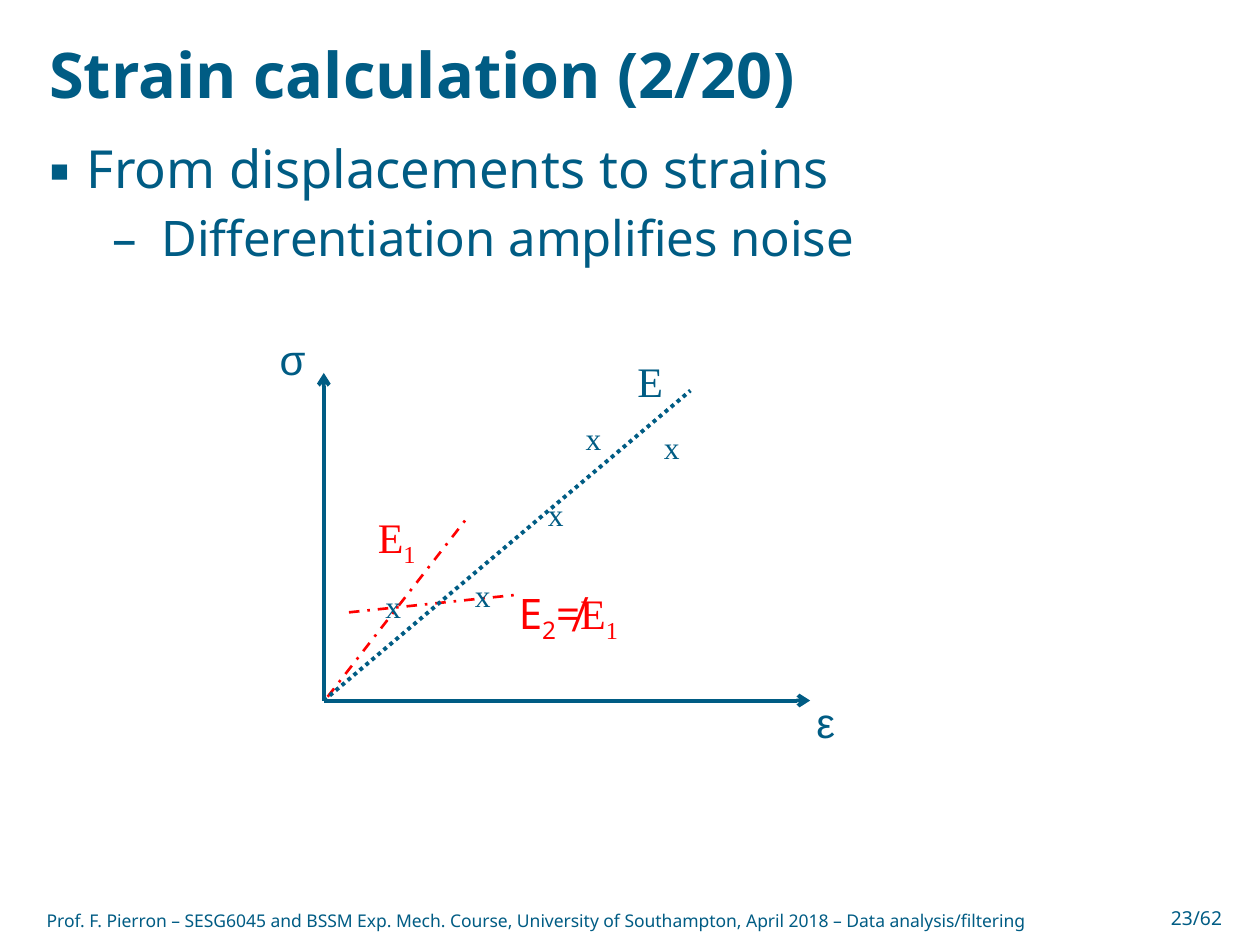
from lxml import etree
from pptx import Presentation
from pptx import util as u
from pptx.dml.color import RGBColor
from pptx.enum import dml, shapes, text
from pptx.oxml import ns

COLORS = {"blue": "005C84", "red": "FF0000"}
SANS, SERIF, GREEK = "Noto Sans", "Times New Roman", "Arial"


def add_run(paragraph, wording, size, font, color="blue", bold=False, subscript=False):
    run = paragraph.add_run()
    run.text = wording
    run.font.size = u.Pt(size)
    run.font.name = font
    run.font.bold = bold
    run.font.color.rgb = RGBColor.from_string(COLORS[color])
    if subscript:
        run._r.get_or_add_rPr().set("baseline", "-25000")


def place(shape, left, top, width, height, anchor):
    shape.left, shape.top = u.Inches(left), u.Inches(top)
    shape.width, shape.height = u.Inches(width), u.Inches(height)
    frame = shape.text_frame
    frame.margin_left = frame.margin_right = frame.margin_top = frame.margin_bottom = 0
    frame.word_wrap = True
    frame.auto_size = text.MSO_AUTO_SIZE.NONE
    frame.vertical_anchor = anchor
    return frame


presentation = Presentation()
presentation.slide_width = u.Inches(10)
presentation.slide_height = u.Inches(7.5)
slide = presentation.slides.add_slide(presentation.slide_layouts[1])
bottom, top_anchor = text.MSO_ANCHOR.BOTTOM, text.MSO_ANCHOR.TOP

title = place(slide.shapes.title, 0.39, 0, 9.3, 0.88, bottom).paragraphs[0]
title.alignment = text.PP_ALIGN.LEFT
add_run(title, "Strain calculation (2/20)", 36, SANS, bold=True)

body = place(slide.placeholders[1], 0.39, 1.08, 9.31, 5.99, top_anchor)
bullets = [
    ("From displacements to strains", 30, "▪", 0.3, 0.3, 0, 1),
    ("Differentiation amplifies noise", 28, "–", 0.89, 0.39, 8.4, 0.9),
]
for level, (wording, size, mark, margin, hanging, before, spacing) in enumerate(bullets):
    paragraph = body.add_paragraph() if level else body.paragraphs[0]
    paragraph.level = level
    properties = paragraph._p.get_or_add_pPr()
    properties.set("marL", str(u.Inches(margin)))
    properties.set("indent", str(-u.Inches(hanging)))
    bullet_color = etree.SubElement(properties, ns.qn("a:buClr"))
    etree.SubElement(bullet_color, ns.qn("a:srgbClr")).set("val", COLORS["blue"])
    etree.SubElement(properties, ns.qn("a:buFont")).set("typeface", SANS)
    etree.SubElement(properties, ns.qn("a:buChar")).set("char", mark)
    paragraph.space_before = u.Pt(before)
    paragraph.line_spacing = spacing
    add_run(paragraph, wording, size, SANS)

data_points = [(2.96, 4.61), (3.67, 4.52), (4.25, 3.88), (4.55, 3.28), (5.17, 3.35)]
labels = [(left, top, 0.31, 0.4, 18, [("x", SERIF, "blue", False)]) for left, top in data_points]
labels += [
    (2.12, 2.6, 0.41, 0.5, 24, [("σ", GREEK, "blue", False)]),
    (6.38, 5.48, 0.35, 0.5, 24, [("ε", GREEK, "blue", False)]),
    (2.9, 4.01, 0.53, 0.5, 24, [("E", SERIF, "red", False), ("1", SERIF, "red", True)]),
    (4.02, 4.61, 1.03, 0.5, 24, [
        ("E", SANS, "red", False), ("2", SANS, "red", True), ("≠", SANS, "red", False),
        ("E", SERIF, "red", False), ("1", SERIF, "red", True)]),
    (4.96, 2.77, 0.41, 0.5, 24, [("E", SERIF, "blue", False)]),
]

origin = (2.57, 5.56)
dash_dot, dotted = dml.MSO_LINE.DASH_DOT, dml.MSO_LINE.ROUND_DOT
lines = [
    (origin, (6.43, 5.56), "blue", 2.25, None, True),
    (origin, (2.57, 2.96), "blue", 2.25, None, True),
    ((2.6, 5.53), (3.7, 4.12), "red", 1.5, dash_dot, False),
    ((2.77, 4.86), (4.11, 4.72), "red", 1.5, dash_dot, False),
    (origin, (5.48, 3.1), "blue", 2.25, dotted, False),
]
for start, end, color, width, dash, arrow in lines:
    points = [u.Inches(value) for value in start + end]
    connector = slide.shapes.add_connector(shapes.MSO_CONNECTOR.STRAIGHT, *points)
    connector.line.color.rgb = RGBColor.from_string(COLORS[color])
    connector.line.width = u.Pt(width)
    if dash is not None:
        connector.line.dash_style = dash
    if arrow:
        line_properties = connector.line._get_or_add_ln()
        etree.SubElement(line_properties, ns.qn("a:tailEnd")).set("type", "arrow")
    etree.SubElement(connector._element.spPr, ns.qn("a:effectLst"))

for left, top, width, height, size, runs in labels:
    label = slide.shapes.add_textbox(*[u.Inches(value) for value in (left, top, width, height)])
    label.text_frame.word_wrap = False
    label.text_frame.auto_size = text.MSO_AUTO_SIZE.SHAPE_TO_FIT_TEXT
    for wording, font, color, subscript in runs:
        add_run(label.text_frame.paragraphs[0], wording, size, font, color, subscript=subscript)

footers = [
    ("Prof. F. Pierron – SESG6045 and BSSM Exp. Mech. Course, University of Southampton, "
     "April 2018 – Data analysis/filtering", 10, (0.37, 7.16, 8.39, 0.23), text.PP_ALIGN.LEFT),
    ("23/62", 11, (8.86, 7.18, 0.84, 0.2), text.PP_ALIGN.RIGHT),
]
for wording, size, box, alignment in footers:
    footer = slide.shapes.add_textbox(0, 0, 0, 0)
    paragraph = place(footer, *box, bottom).paragraphs[0]
    paragraph.alignment = alignment
    add_run(paragraph, wording, size, SANS)

presentation.save("out.pptx")
